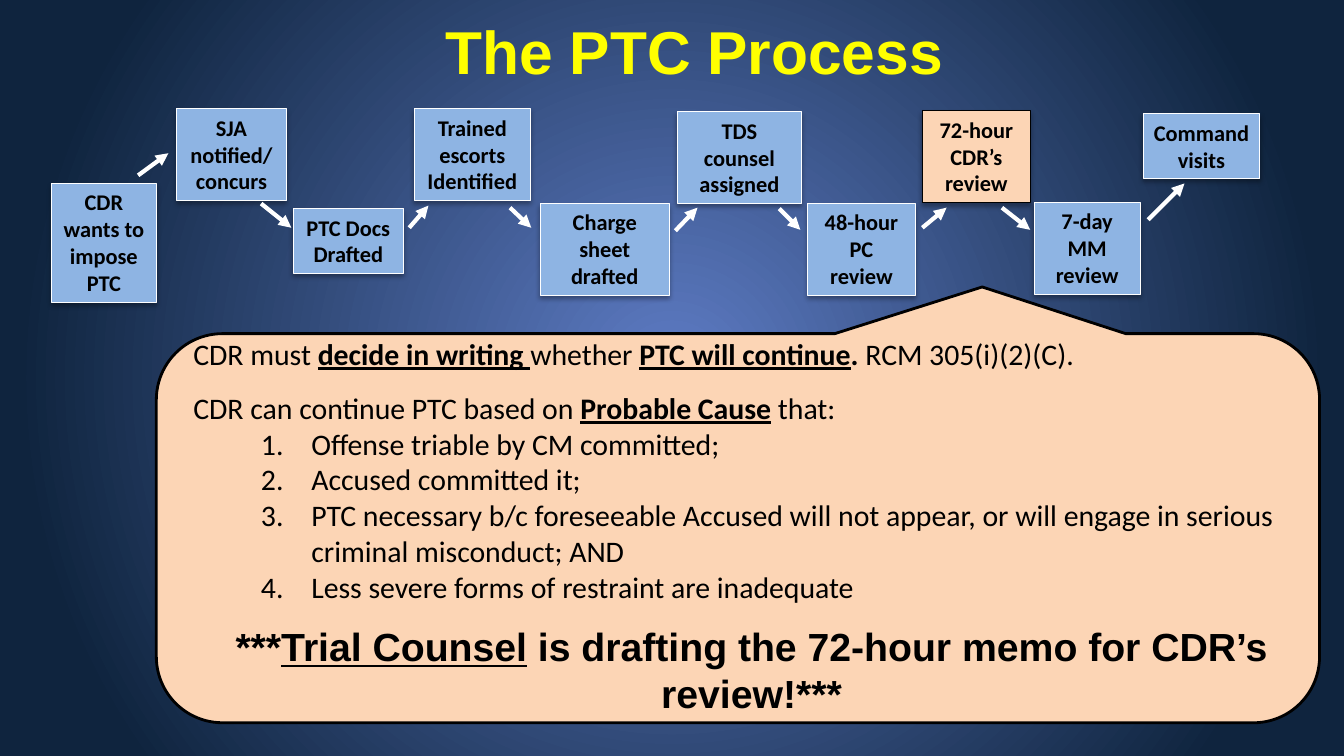
from pptx import Presentation
from pptx.dml.color import RGBColor
from pptx.enum.shapes import MSO_CONNECTOR, MSO_SHAPE
from pptx.enum.text import MSO_ANCHOR, MSO_AUTO_SIZE, PP_ALIGN
from pptx.oxml import parse_xml
from pptx.oxml.ns import nsdecls, qn
from pptx.util import Inches, Pt

WIDTH, HEIGHT = Inches(13.33), Inches(7.5)
RECTANGLE = MSO_SHAPE.RECTANGLE
CALLOUT = MSO_SHAPE.ROUNDED_RECTANGULAR_CALLOUT
STRAIGHT = MSO_CONNECTOR.STRAIGHT
TOP, MIDDLE = MSO_ANCHOR.TOP, MSO_ANCHOR.MIDDLE
LEFT, CENTER = PP_ALIGN.LEFT, PP_ALIGN.CENTER
NO_FIT = MSO_AUTO_SIZE.NONE

BLUE, PEACH = "8EB4E3", "FCD5B5"
WHITE, BLACK, YELLOW = "FFFFFF", "000000", "FFFF00"
PLAIN, BOLD, MARKED = (False, False), (True, False), (True, True)

# Left, top and width in percent of the slide, lines of text, paragraphs
STEPS = [
    (3.83, 24.27, 7.8, 4, ["CDR wants to impose PTC"]),
    (13.13, 14.4, 8.18, 3, ["SJA notified/ concurs"]),
    (21.83, 27.6, 8.18, 2, ["PTC Docs", "Drafted"]),
    (30.83, 14.4, 8.63, 3, ["Trained escorts Identified"]),
    (40.2, 26.93, 9.6, 3, ["Charge sheet drafted"]),
    (50.4, 14.8, 9.23, 3, ["TDS counsel assigned"]),
    (60.08, 26.93, 8.03, 3, ["48-hour PC review"]),
    (68.63, 14.67, 8.03, 3, ["72-hour CDR’s review"]),
    (76.95, 26.8, 7.88, 3, ["7-day MM review"]),
    (85.05, 15.07, 8.7, 2, ["Command visits"]),
]
CURRENT_STEP = 7

# Start and end in percent of the slide
ARROWS = [
    (10.28, 23.2, 12.53, 20.27),
    (19.43, 26.93, 21.68, 30.13),
    (30.45, 30.13, 31.88, 27.2),
    (37.95, 27.47, 39.53, 30.13),
    (50.25, 30.53, 51.9, 27.47),
    (57.98, 27.6, 59.55, 30.4),
    (68.63, 30.13, 70.43, 27.47),
    (74.55, 27.47, 76.65, 30.4),
    (85.43, 29.07, 88.13, 24.27),
]

DECISION = [
    ("CDR must ", PLAIN), ("decide in writing ", MARKED), ("whether ", PLAIN),
    ("PTC will continue", MARKED), (". ", BOLD), ("RCM 305(i)(2)(C).", PLAIN),
]
BASIS = [
    ("CDR can continue PTC based on ", PLAIN), ("Probable Cause", MARKED),
    (" ", BOLD), ("that:", PLAIN),
]
CONDITIONS = [
    "Offense triable by CM committed;",
    "Accused committed it;",
    "PTC necessary b/c foreseeable Accused will not appear, "
    "or will engage in serious criminal misconduct; AND",
    "Less severe forms of restraint are inadequate",
]
REMINDER = [
    ("***", BOLD), ("Trial Counsel", MARKED),
    (" is drafting the 72-hour memo for CDR’s review!***", BOLD),
]


def color(text):
    return RGBColor.from_string(text)


def percent(*lengths):
    """Turn alternating x and y percentages into slide lengths."""
    return [int((HEIGHT if i % 2 else WIDTH) * length / 100)
            for i, length in enumerate(lengths)]


def set_background(page):
    fill = page.background.fill
    fill.gradient()
    for stop, (position, tone) in zip(fill.gradient_stops, [(0, "5E7CC5"), (0.85, "0F243E")]):
        stop.position = position
        stop.color.rgb = color(tone)
    gradient = page.element.find(".//" + qn("a:gradFill"))
    gradient.remove(gradient.find(qn("a:lin")))
    gradient.append(parse_xml(
        f'<a:path {nsdecls("a")} path="circle">'
        '<a:fillToRect l="50000" t="50000" r="50000" b="50000"/></a:path>'))


def add_spans(para, spans, size, font="Calibri", tone=BLACK, align=LEFT):
    para.alignment = align
    for text, (bold, underline) in spans:
        span = para.add_run()
        span.text = text
        span.font.name, span.font.size = font, Pt(size)
        span.font.bold, span.font.underline = bold, underline
        span.font.color.rgb = color(tone)


def prepare_frame(box, anchor=TOP):
    frame = box.text_frame
    frame.word_wrap = True
    frame.auto_size = NO_FIT
    frame.vertical_anchor = anchor
    return frame


def paragraph(frame, index):
    return frame.add_paragraph() if index else frame.paragraphs[0]


def add_title(page, text):
    title = page.shapes.title
    title.left, title.top, title.width, title.height = percent(5.78, 1.07, 91.8, 11.07)
    frame = prepare_frame(title, MIDDLE)
    add_spans(frame.paragraphs[0], [(text, BOLD)], 43.2, "Arial", YELLOW, CENTER)


def add_filled(page, kind, place, fill, line, weight):
    box = page.shapes.add_shape(kind, *percent(*place))
    box.shadow.inherit = False
    box.fill.solid()
    box.fill.fore_color.rgb = color(fill)
    box.line.color.rgb = color(line)
    box.line.width = Pt(weight)
    return box


def add_step(page, left, top, width, lines, texts, current):
    place = (left, top, width, 1.33 + 3.6 * lines)
    fill, line = (PEACH, BLACK) if current else (BLUE, WHITE)
    box = add_filled(page, RECTANGLE, place, fill, line, 0.75)
    effects = box.element.spPr.find(qn("a:effectLst"))
    effects.append(parse_xml(
        f'<a:outerShdw {nsdecls("a")} blurRad="{Pt(3.5)}" dist="{Pt(2.2)}" '
        'dir="5400000" rotWithShape="0"><a:srgbClr val="000000">'
        '<a:alpha val="32000"/></a:srgbClr></a:outerShdw>'))
    frame = prepare_frame(box)
    for index, text in enumerate(texts):
        add_spans(paragraph(frame, index), [(text, BOLD)], 16, align=CENTER)


def add_arrow(page, ends):
    arrow = page.shapes.add_connector(STRAIGHT, *percent(*ends))
    arrow.line.color.rgb = color(WHITE)
    arrow.line.width = Pt(3)
    arrow.line._get_or_add_ln().append(
        parse_xml(f'<a:tailEnd {nsdecls("a")} type="triangle"/>'))
    arrow.element.spPr.append(parse_xml(f'<a:effectLst {nsdecls("a")}/>'))


def number_paragraph(para):
    properties = para._p.get_or_add_pPr()
    properties.set("marL", str(Inches(1.17)))
    properties.set("indent", str(Inches(-0.5)))
    properties.append(parse_xml(f'<a:buFont {nsdecls("a")} typeface="+mj-lt"/>'))
    properties.append(parse_xml(f'<a:buAutoNum {nsdecls("a")} type="arabicPeriod"/>'))


def add_review_details(page):
    callout = add_filled(page, CALLOUT, (11.63, 44.13, 86.55, 51.47), PEACH, BLACK, 2)
    callout.rotation = 180
    for index, value in enumerate([-0.21, 0.62, 0.17]):
        callout.adjustments[index] = value

    frame = prepare_frame(page.shapes.add_textbox(*percent(13.65, 43.73, 84.53, 54)))
    add_spans(frame.paragraphs[0], DECISION, 21.3)
    basis = frame.add_paragraph()
    basis.space_before = Pt(13)
    add_spans(basis, BASIS, 21.3)
    for text in CONDITIONS:
        condition = frame.add_paragraph()
        condition.level = 1
        number_paragraph(condition)
        add_spans(condition, [(text, PLAIN)], 21.3)
    reminder = frame.add_paragraph()
    reminder.space_before = Pt(13)
    add_spans(reminder, REMINDER, 28, "Arial", align=CENTER)


def main():
    deck = Presentation()
    deck.slide_width, deck.slide_height = WIDTH, HEIGHT
    page = deck.slides.add_slide(deck.slide_layouts[5])
    set_background(page)
    add_title(page, "The PTC Process")
    add_review_details(page)
    for index, step in enumerate(STEPS):
        add_step(page, *step, current=index == CURRENT_STEP)
    for ends in ARROWS:
        add_arrow(page, ends)
    deck.save("out.pptx")


if __name__ == "__main__":
    main()
